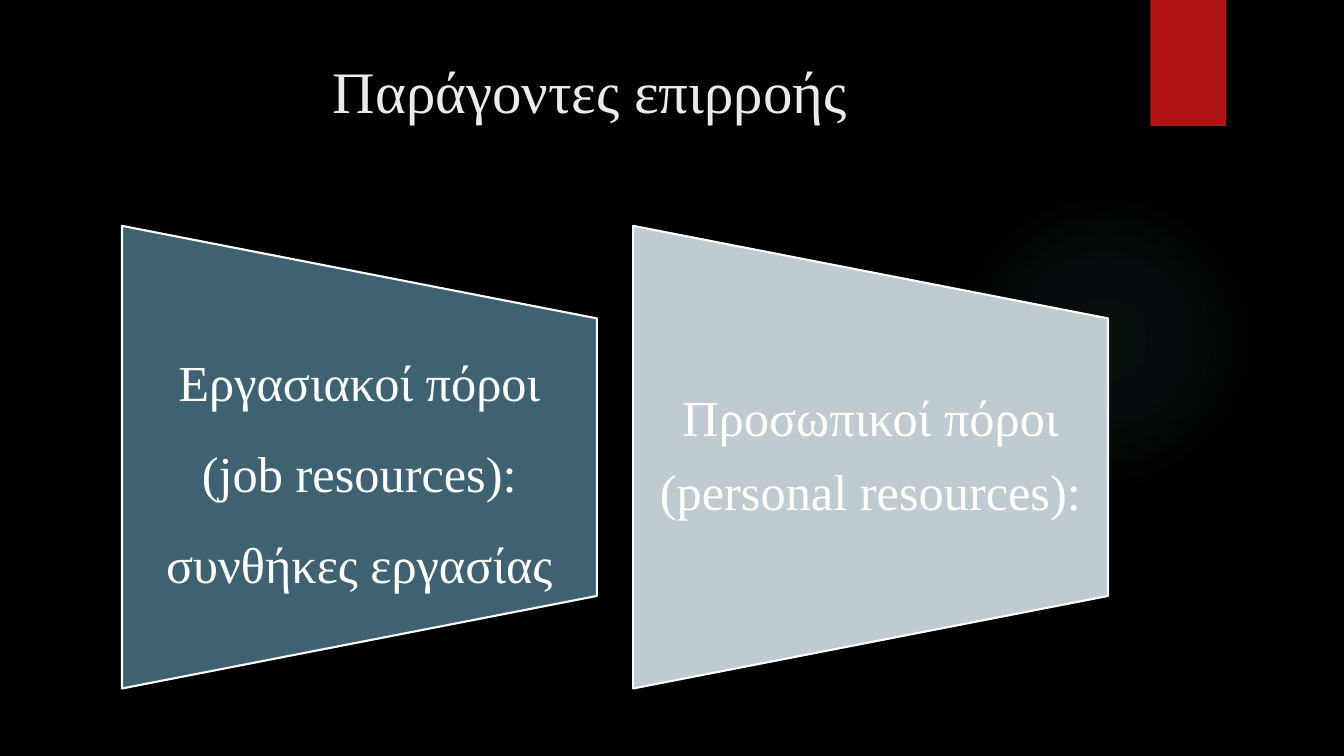
from lxml import etree
from pptx import Presentation, util as u
from pptx.dml.color import RGBColor
from pptx.enum import shapes, text
from pptx.oxml import ns

SLIDE_W, SLIDE_H = u.Inches(13.33), u.Inches(7.5)
BLACK = RGBColor(0x00, 0x00, 0x00)
WHITE = RGBColor(0xFF, 0xFF, 0xFF)
TITLE_GREY = RGBColor(0xEB, 0xEB, 0xEB)
RED = RGBColor(0xB0, 0x15, 0x13)
TEAL = RGBColor(0x50, 0xB9, 0xC1)
SLATE = RGBColor(0x3E, 0x62, 0x72)
MIST = RGBColor(0xBF, 0xCA, 0xD1)
FONT = "Times New Roman"

# Percent of the slide's width and height
CARD_LEFT, CARD_STEP = 9.08, 38.03
CARD_W, CARD_TOP, CARD_H = 35.33, 42.13, 36.67
PANEL_INSET, PANEL_W, PANEL_TOP, PANEL_H = 0.45, 34.43, 29.07, 62.8


def place(x, y, w, h):
    """Turn percentages of the slide into left, top, width and height."""
    return [round(share * side / 100) for share, side in
            ((x, SLIDE_W), (y, SLIDE_H), (w, SLIDE_W), (h, SLIDE_H))]


def add_shape(slide, kind, area, fill, line=None):
    sp = slide.shapes.add_shape(kind, *place(*area))
    sp.shadow.inherit = False
    sp.fill.solid()
    sp.fill.fore_color.rgb = fill
    if line is None:
        sp.line.fill.background()
    else:
        sp.line.color.rgb = line
        sp.line.width = u.Pt(1.5)
    return sp


def add_text(slide, area, lines, size, color=WHITE, anchor=text.MSO_ANCHOR.TOP,
             inset=(0.1, 0.05), spacing=1.0, after=0):
    tf = slide.shapes.add_textbox(*place(*area)).text_frame
    tf.word_wrap = True
    tf.vertical_anchor = anchor
    tf.margin_left = tf.margin_right = u.Inches(inset[0])
    tf.margin_top = tf.margin_bottom = u.Inches(inset[1])
    for i, line in enumerate(lines):
        p = tf.add_paragraph() if i else tf.paragraphs[0]
        p.alignment = text.PP_ALIGN.CENTER
        p.line_spacing = spacing
        p.space_after = u.Pt(after)
        r = p.add_run()
        r.text = line
        r.font.name = FONT
        r.font.size = u.Pt(size)
        r.font.color.rgb = color


def add_glow(slide, area, color, stops):
    """Draw a circle that fades outwards; stops are (position, opacity) in percent."""
    sp = add_shape(slide, shapes.MSO_SHAPE.OVAL, area, color)
    sp.fill.gradient()
    grad = sp.fill._xPr.find(ns.qn("a:gradFill"))
    for child in list(grad):
        grad.remove(child)
    stop_list = etree.SubElement(grad, ns.qn("a:gsLst"))
    for position, opacity in stops:
        stop = etree.SubElement(stop_list, ns.qn("a:gs"), pos=str(position * 1000))
        rgb = etree.SubElement(stop, ns.qn("a:srgbClr"), val=str(color))
        etree.SubElement(rgb, ns.qn("a:alpha"), val=str(opacity * 1000))
    circle = etree.SubElement(grad, ns.qn("a:path"), path="circle")
    etree.SubElement(circle, ns.qn("a:fillToRect"),
                     {side: "50000" for side in "ltrb"})


def add_card(slide, column, fill, lines, **fmt):
    left = CARD_LEFT + column * CARD_STEP
    panel = add_shape(slide, shapes.MSO_SHAPE.FLOWCHART_MANUAL_OPERATION,
                      (left + PANEL_INSET, PANEL_TOP, PANEL_W, PANEL_H), fill, WHITE)
    panel.rotation = 270
    add_text(slide, (left, CARD_TOP, CARD_W, CARD_H), lines, 36,
             anchor=text.MSO_ANCHOR.MIDDLE, inset=(0.25, 0), **fmt)


def main():
    prs = Presentation()
    prs.slide_width, prs.slide_height = SLIDE_W, SLIDE_H
    s = prs.slides.add_slide(prs.slide_layouts[6])
    s.background.fill.solid()
    s.background.fill.fore_color.rgb = BLACK

    add_glow(s, (70.59, 24.4, 23.11, 41.07), TEAL, [(0, 7), (36, 6), (69, 0)])
    add_shape(s, shapes.MSO_SHAPE.RECTANGLE, (85.6, 0, 5.63, 16.67), RED)
    add_text(s, (5.33, 6.53, 77.12, 20.4), ["Παράγοντες επιρροής"], 42, TITLE_GREY)
    add_card(s, 0, SLATE, ["Εργασιακοί πόροι", "(job resources): συνθήκες εργασίας"],
             spacing=1.5)
    add_card(s, 1, MIST, ["Προσωπικοί πόροι", "(personal resources):"],
             spacing=0.9, after=14.5)
    prs.save("out.pptx")


if __name__ == "__main__":
    main()
